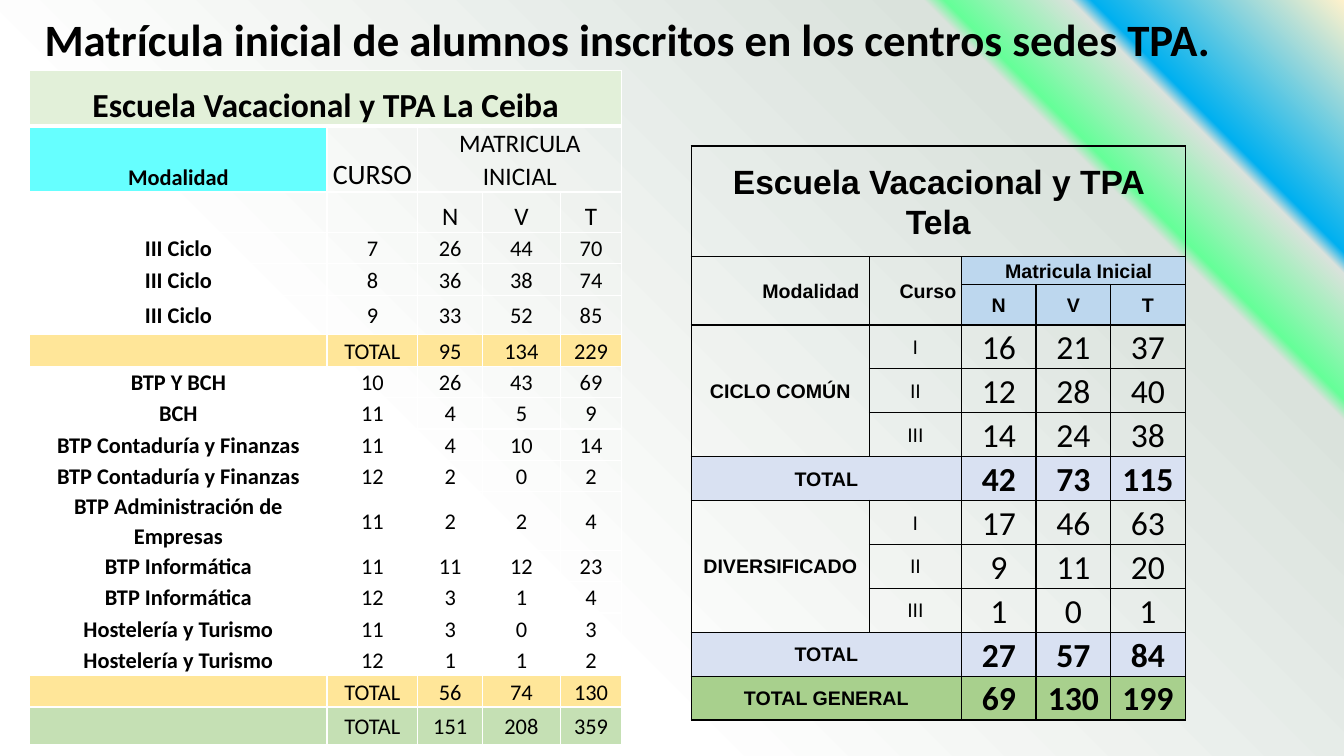
from dataclasses import dataclass, replace

from lxml.etree import SubElement
from pptx import Presentation
from pptx.dml.color import RGBColor
from pptx.enum.text import MSO_ANCHOR, PP_ALIGN
from pptx.oxml import parse_xml
from pptx.oxml.ns import nsdecls, qn
from pptx.slide import Slide
from pptx.table import _Cell
from pptx.text.text import TextFrame
from pptx.util import Cm, Pt

COLORS = {
    "black": "000000", "white": "FFFFFF", "mint": "E2F0D9", "cyan": "66FFFF",
    "yellow": "FFE699", "green": "C5E0B4", "sky": "BDD7EE", "lavender": "D9E1F2",
    "leaf": "A8D08D", "cream": "FFF2CC", "blue": "00B0F0", "grey": "DAE2DC",
    "neon": "66FF99",
}
BACKGROUND_STOPS = [(0, "cream"), (12, "blue"), (13, "grey"),
                    (19, "neon"), (20, "grey"), (67, "white")]


@dataclass(frozen=True)
class Entry:
    text: str = ""
    size: float = 16
    bold: bool = False
    font: str = "Calibri"
    fill: str | None = None
    anchor: MSO_ANCHOR = MSO_ANCHOR.MIDDLE
    align: PP_ALIGN = PP_ALIGN.CENTER
    rows: int = 1
    columns: int = 1
    left: float = 0.13
    right: float = 0.13


@dataclass(frozen=True)
class Grid:
    left: float
    top: float
    widths: list[float]
    heights: list[float]
    border: str
    entries: list[list[Entry | None]]
    heading_rule: float = 1


def write(frame: TextFrame, text: str, *, size: float, bold: bool, font: str,
          align: PP_ALIGN = PP_ALIGN.CENTER, spacing: float = 1.0) -> None:
    para = frame.paragraphs[0]
    para.alignment = align
    para.line_spacing = spacing
    span = para.add_run()
    span.text = text
    span.font.size = Pt(size)
    span.font.bold = bold
    span.font.name = font
    span.font.color.rgb = RGBColor.from_string(COLORS["black"])


def paint_background(page: Slide) -> None:
    """Radial gradient that starts in the top right corner."""
    stops = "".join(
        f'<a:gs pos="{position * 1000}"><a:srgbClr val="{COLORS[color]}"/></a:gs>'
        for position, color in BACKGROUND_STOPS)
    page.element.cSld.insert(0, parse_xml(
        f'<p:bg {nsdecls("p", "a")}><p:bgPr><a:gradFill><a:gsLst>{stops}</a:gsLst>'
        '<a:path path="circle"><a:fillToRect l="100000" b="100000"/></a:path>'
        '</a:gradFill><a:effectLst/></p:bgPr></p:bg>'))


def set_borders(cell: _Cell, color: str, bottom: float) -> None:
    properties = cell._tc.get_or_add_tcPr()
    for side, width in (("L", 1), ("R", 1), ("T", 1), ("B", bottom)):
        line = SubElement(properties, qn(f"a:ln{side}"), w=str(Pt(width)))
        fill = SubElement(line, qn("a:solidFill"))
        SubElement(fill, qn("a:srgbClr"), val=COLORS[color])


def fill_cell(cell: _Cell, entry: Entry) -> None:
    cell.margin_top = cell.margin_bottom = 0
    cell.margin_left, cell.margin_right = Cm(entry.left), Cm(entry.right)
    cell.vertical_anchor = entry.anchor
    if entry.fill:
        cell.fill.solid()
        cell.fill.fore_color.rgb = RGBColor.from_string(COLORS[entry.fill])
    else:
        cell.fill.background()
    if entry.text:
        write(cell.text_frame, entry.text, size=entry.size, bold=entry.bold,
              font=entry.font, align=entry.align, spacing=1.07)


def draw_grid(page: Slide, grid: Grid) -> None:
    table = page.shapes.add_table(
        len(grid.heights), len(grid.widths), Cm(grid.left), Cm(grid.top),
        Cm(sum(grid.widths)), Cm(sum(grid.heights))).table
    table.first_row = table.horz_banding = False
    for column, width in zip(table.columns, grid.widths):
        column.width = Cm(width)
    for row, height in zip(table.rows, grid.heights):
        row.height = Cm(height)
    for r, entries in enumerate(grid.entries):
        for c, entry in enumerate(entries):
            cell = table.cell(r, c)
            set_borders(cell, grid.border, 1 if r else grid.heading_rule)
            fill_cell(cell, entry or Entry())
            if entry and entry.rows * entry.columns > 1:
                cell.merge(table.cell(r + entry.rows - 1, c + entry.columns - 1))


def ceiba_course(name: str, *values: int) -> list[Entry]:
    return [Entry(name, bold=True), *(Entry(str(value)) for value in values)]


def ceiba_total(fill: str, *values: int,
                anchor: MSO_ANCHOR = MSO_ANCHOR.MIDDLE) -> list[Entry]:
    return [Entry(text, fill=fill, anchor=anchor)
            for text in ("", "TOTAL", *map(str, values))]


def tela_numbers(values: tuple[int, ...], bold: bool = False,
                 fill: str | None = None) -> list[Entry]:
    return [Entry(str(value), size=24, bold=bold, fill=fill) for value in values]


def tela_cycle(name: str, *courses: tuple[int, ...]) -> list[list[Entry | None]]:
    """Rows of one cycle, whose name spans its numbered courses."""
    heading = replace(TELA_LABEL, text=name, rows=len(courses))
    return [[None if index else heading,
             replace(TELA_LABEL, text="I" * (index + 1), bold=False),
             *tela_numbers(values)] for index, values in enumerate(courses)]


def tela_total(name: str, fill: str, *values: int) -> list[Entry | None]:
    return [replace(TELA_LABEL, text=name, fill=fill, columns=2), None,
            *tela_numbers(values, bold=True, fill=fill)]


BOTTOM = MSO_ANCHOR.BOTTOM
TELA_LABEL = Entry(size=14, bold=True, font="Arial")
TELA_RIGHT = replace(TELA_LABEL, align=PP_ALIGN.RIGHT, rows=2)
TELA_BLUE = replace(TELA_LABEL, fill="sky")

CEIBA = Grid(
    left=0.75, top=1.78, border="white", heading_rule=3,
    widths=[7.49, 2.29, 1.63, 1.96, 1.55],
    heights=[1.4, 1.6, 1.02, 0.79, 0.79, 1, *[0.79] * 11, 0.96],
    entries=[
        [Entry("Escuela Vacacional y TPA La Ceiba", size=24, bold=True,
               fill="mint", anchor=BOTTOM, columns=5), *[None] * 4],
        [Entry("Modalidad", bold=True, fill="cyan", anchor=BOTTOM),
         Entry("CURSO", size=20, anchor=BOTTOM),
         Entry("MATRICULA INICIAL", size=18, anchor=BOTTOM, columns=3), None, None],
        [Entry(), Entry(), *(Entry(text, size=18, anchor=BOTTOM) for text in "NVT")],
        ceiba_course("III Ciclo", 7, 26, 44, 70),
        ceiba_course("III Ciclo", 8, 36, 38, 74),
        ceiba_course("III Ciclo", 9, 33, 52, 85),
        ceiba_total("yellow", 95, 134, 229),
        ceiba_course("BTP Y BCH", 10, 26, 43, 69),
        ceiba_course("BCH", 11, 4, 5, 9),
        ceiba_course("BTP Contaduría y Finanzas", 11, 4, 10, 14),
        ceiba_course("BTP Contaduría y Finanzas", 12, 2, 0, 2),
        ceiba_course("BTP Administración de Empresas", 11, 2, 2, 4),
        ceiba_course("BTP Informática", 11, 11, 12, 23),
        ceiba_course("BTP Informática", 12, 3, 1, 4),
        ceiba_course("Hostelería y Turismo", 11, 3, 0, 3),
        ceiba_course("Hostelería y Turismo", 12, 1, 1, 2),
        ceiba_total("yellow", 56, 74, 130, anchor=BOTTOM),
        ceiba_total("green", 151, 208, 359),
    ])

TELA = Grid(
    left=17.42, top=3.68, border="black",
    widths=[4.49, 2.32, 1.88, 1.88, 1.88],
    heights=[2.79, 0.7, 1.02, *[1.09] * 9],
    entries=[
        [replace(TELA_LABEL, text="Escuela Vacacional y TPA Tela", size=24,
                 columns=5), *[None] * 4],
        [replace(TELA_RIGHT, text="Modalidad", right=0.25),
         replace(TELA_RIGHT, text="Curso"),
         replace(TELA_BLUE, text="Matricula Inicial", columns=3, left=0.4),
         None, None],
        [None, None, *(replace(TELA_BLUE, text=text) for text in "NVT")],
        *tela_cycle("CICLO COMÚN", (16, 21, 37), (12, 28, 40), (14, 24, 38)),
        tela_total("TOTAL", "lavender", 42, 73, 115),
        *tela_cycle("DIVERSIFICADO", (17, 46, 63), (9, 11, 20), (1, 0, 1)),
        tela_total("TOTAL", "lavender", 27, 57, 84),
        tela_total("TOTAL GENERAL", "leaf", 69, 130, 199),
    ])


def main() -> None:
    deck = Presentation()
    deck.slide_width, deck.slide_height = Cm(33.87), Cm(19.05)
    page = deck.slides.add_slide(deck.slide_layouts[5])
    paint_background(page)
    box = page.shapes.title
    box.left, box.top, box.width, box.height = Cm(0.69), Cm(0.15), Cm(30.28), Cm(1.63)
    box.text_frame.word_wrap = True
    write(box.text_frame,
          "Matrícula inicial de alumnos inscritos en los centros sedes TPA.",
          size=32, bold=True, font="Calibri")
    for grid in (CEIBA, TELA):
        draw_grid(page, grid)
    deck.save("out.pptx")


if __name__ == "__main__":
    main()
